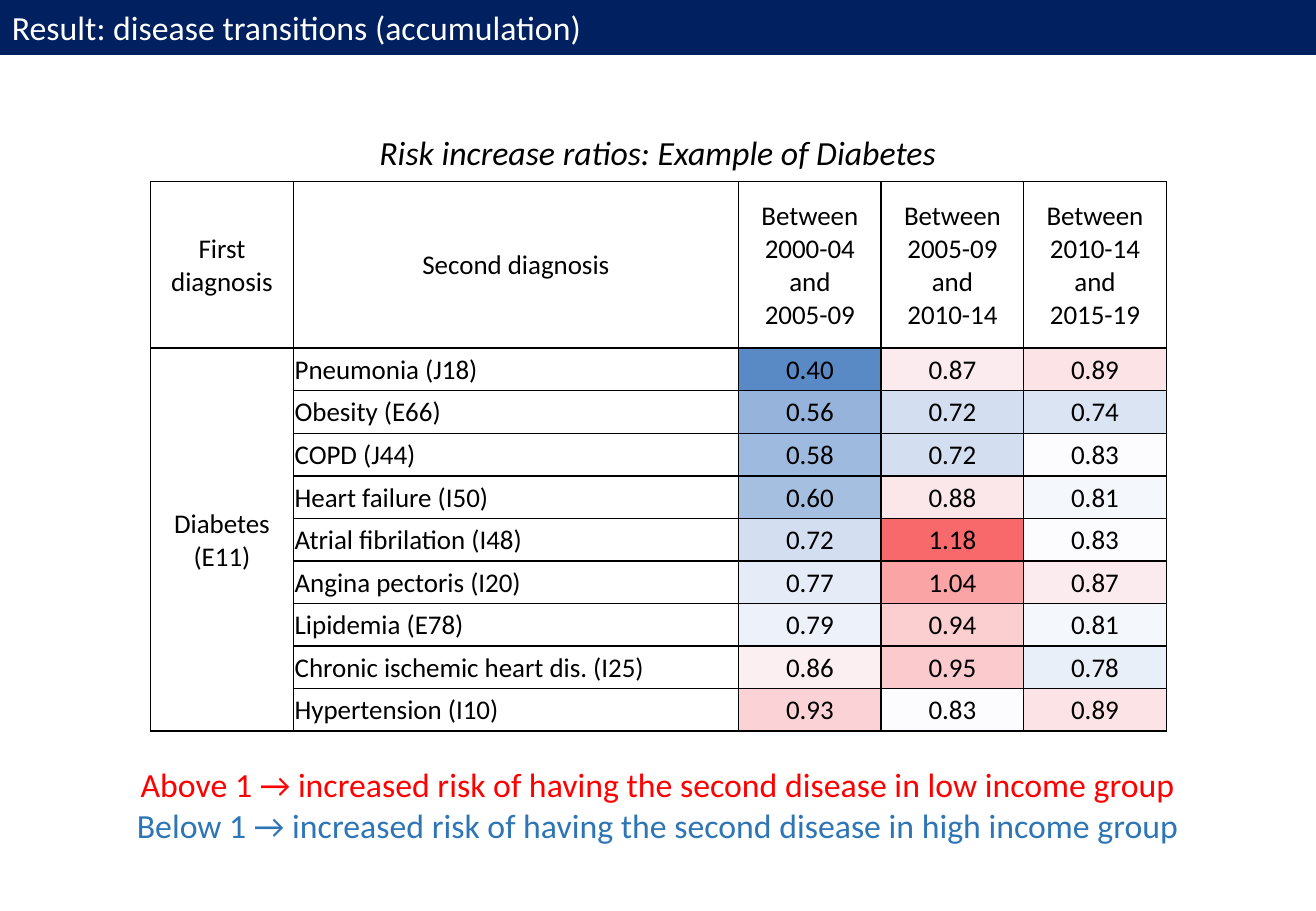
"""Build the slide on disease transitions with the diabetes risk ratio table."""
from typing import NamedTuple

from lxml.etree import SubElement
from pptx import Presentation
from pptx.dml.color import RGBColor
from pptx.enum.shapes import MSO_SHAPE
from pptx.enum.text import MSO_ANCHOR, MSO_AUTO_SIZE, PP_ALIGN
from pptx.oxml.ns import qn
from pptx.util import Cm, Pt

FONT = "Calibri"
BLACK, WHITE, NAVY = "000000", "FFFFFF", "002060"
RED, BLUE = "FF0000", "2E75B6"
SLIDE_W, SLIDE_H = 27.51, 19.05
COL_WIDTHS = (2.98, 9.31, 2.98, 2.98, 2.98)
HEADER_H, ROW_H = 3.48, 0.89
SCALE_LOW = (0.40, "5A8AC6")
SCALE_MID = (0.83, "FCFCFF")
SCALE_HIGH = (1.18, "F8696B")


class Line(NamedTuple):
    text: str
    color: str = BLACK
    italic: bool = False


class TextBox(NamedTuple):
    top: float
    height: float
    lines: tuple[Line, ...]


class Disease(NamedTuple):
    name: str
    ratios: tuple[float, float, float]


TEXT_BOXES = (
    TextBox(15.85, 1.96, (
        Line("Above 1 → increased risk of having the second disease in low income group", RED),
        Line("Below 1 → increased risk of having the second disease in high income group", BLUE),
    )),
    TextBox(2.64, 1.11, (Line("Risk increase ratios: Example of Diabetes", italic=True),)),
)
HEADERS = (
    "First diagnosis",
    "Second diagnosis",
    "Between 2000-04\nand\n2005-09",
    "Between 2005-09\nand\n2010-14",
    "Between 2010-14\nand\n2015-19",
)
DISEASES = (
    Disease("Pneumonia (J18)", (0.40, 0.87, 0.89)),
    Disease("Obesity (E66)", (0.56, 0.72, 0.74)),
    Disease("COPD (J44)", (0.58, 0.72, 0.83)),
    Disease("Heart failure (I50)", (0.60, 0.88, 0.81)),
    Disease("Atrial fibrilation (I48)", (0.72, 1.18, 0.83)),
    Disease("Angina pectoris (I20)", (0.77, 1.04, 0.87)),
    Disease("Lipidemia (E78)", (0.79, 0.94, 0.81)),
    Disease("Chronic ischemic heart dis. (I25)", (0.86, 0.95, 0.78)),
    Disease("Hypertension (I10)", (0.93, 0.83, 0.89)),
)


def rgb(color: str) -> RGBColor:
    return RGBColor.from_string(color)


def heat_color(ratio: float) -> str:
    end, color = SCALE_LOW if ratio < SCALE_MID[0] else SCALE_HIGH
    share = (ratio - SCALE_MID[0]) / (end - SCALE_MID[0])
    pairs = zip(rgb(SCALE_MID[1]), rgb(color))
    return "".join(f"{round(a + (b - a) * share):02X}" for a, b in pairs)


def add_run(p, line: Line, size: float) -> None:
    for i, text in enumerate(line.text.split("\n")):
        if i:
            p.add_line_break()
        r = p.add_run()
        r.text = text
        r.font.name = FONT
        r.font.size = Pt(size)
        r.font.italic = line.italic
        r.font.color.rgb = rgb(line.color)


def add_title_bar(s, text: str) -> None:
    sp = s.shapes.add_shape(MSO_SHAPE.RECTANGLE, 0, 0, Cm(SLIDE_W), Cm(1.11))
    sp.shadow.inherit = False
    sp.fill.solid()
    sp.fill.fore_color.rgb = rgb(NAVY)
    sp.line.color.rgb = rgb(NAVY)
    sp.line.width = Pt(2.25)
    tf = sp.text_frame
    tf.word_wrap = True
    tf.auto_size = MSO_AUTO_SIZE.SHAPE_TO_FIT_TEXT
    p = tf.paragraphs[0]
    p.alignment = PP_ALIGN.LEFT
    add_run(p, Line(text, WHITE), 20)


def add_text_box(s, box: TextBox) -> None:
    sp = s.shapes.add_textbox(0, Cm(box.top), Cm(SLIDE_W), Cm(box.height))
    tf = sp.text_frame
    tf.word_wrap = True
    tf.auto_size = MSO_AUTO_SIZE.SHAPE_TO_FIT_TEXT
    for i, line in enumerate(box.lines):
        p = tf.add_paragraph() if i else tf.paragraphs[0]
        p.alignment = PP_ALIGN.CENTER
        add_run(p, line, 20)


def format_cell(cell) -> None:
    cell.margin_left = cell.margin_right = cell.margin_top = Cm(0.03)
    cell.margin_bottom = 0
    cell.vertical_anchor = MSO_ANCHOR.MIDDLE
    tc_pr = cell._tc.get_or_add_tcPr()
    for side in ("a:lnL", "a:lnR", "a:lnT", "a:lnB"):
        ln = SubElement(tc_pr, qn(side), w=str(Pt(1)))
        SubElement(SubElement(ln, qn("a:solidFill")), qn("a:srgbClr"), val=BLACK)
    cell.fill.background()


def write_cell(cell, text: str, align: PP_ALIGN = PP_ALIGN.CENTER) -> None:
    p = cell.text_frame.paragraphs[0]
    p.alignment = align
    add_run(p, Line(text), 16)


def add_ratio_table(s) -> None:
    n_rows = len(DISEASES) + 1
    height = HEADER_H + ROW_H * len(DISEASES)
    frame = s.shapes.add_table(n_rows, len(COL_WIDTHS), Cm(3.15), Cm(3.8),
                               Cm(sum(COL_WIDTHS)), Cm(height))
    table = frame.table
    table.first_row = table.horz_banding = False
    for col, width in zip(table.columns, COL_WIDTHS):
        col.width = Cm(width)
    for i, row in enumerate(table.rows):
        row.height = Cm(ROW_H if i else HEADER_H)
    for cell in table.iter_cells():
        format_cell(cell)
    for c, header in enumerate(HEADERS):
        write_cell(table.cell(0, c), header)
    first = table.cell(1, 0)
    first.merge(table.cell(n_rows - 1, 0))
    write_cell(first, "Diabetes (E11)")
    for i, disease in enumerate(DISEASES, 1):
        write_cell(table.cell(i, 1), disease.name, PP_ALIGN.LEFT)
        for c, ratio in enumerate(disease.ratios, 2):
            cell = table.cell(i, c)
            write_cell(cell, f"{ratio:.2f}")
            cell.fill.solid()
            cell.fill.fore_color.rgb = rgb(heat_color(ratio))


def main() -> None:
    prs = Presentation()
    prs.slide_width, prs.slide_height = Cm(SLIDE_W), Cm(SLIDE_H)
    s = prs.slides.add_slide(prs.slide_layouts[6])
    add_title_bar(s, "Result: disease transitions (accumulation)")
    add_ratio_table(s)
    for box in TEXT_BOXES:
        add_text_box(s, box)
    prs.save("out.pptx")


if __name__ == "__main__":
    main()
